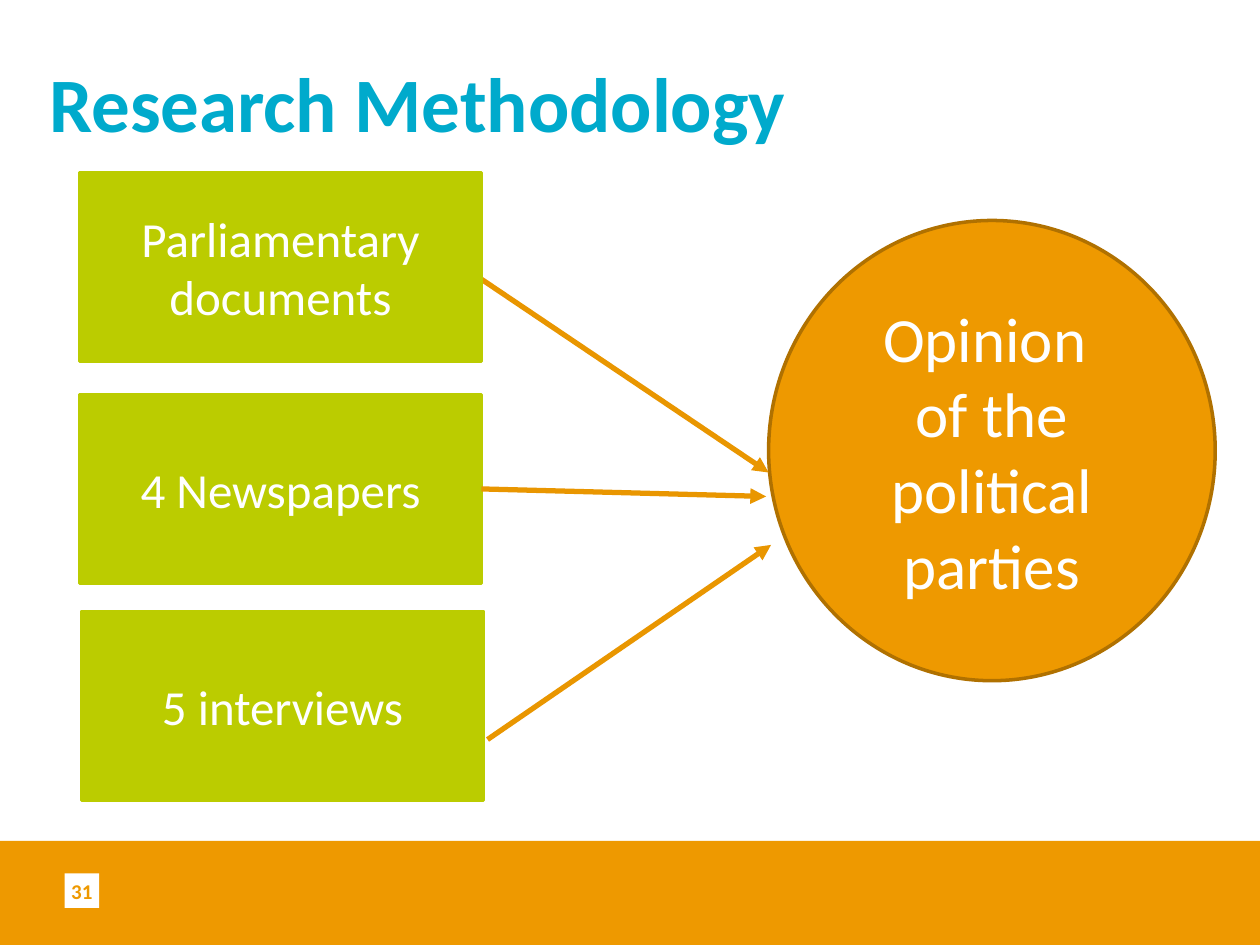
from pptx import Presentation
from pptx.dml.color import RGBColor
from pptx.enum.shapes import MSO_CONNECTOR, MSO_SHAPE
from pptx.enum.text import MSO_ANCHOR, PP_ALIGN
from pptx.oxml.ns import qn
from pptx.util import Pt
from lxml import etree

RECT, OVAL = MSO_SHAPE.RECTANGLE, MSO_SHAPE.OVAL
STRAIGHT = MSO_CONNECTOR.STRAIGHT
LEFT, CENTER = PP_ALIGN.LEFT, PP_ALIGN.CENTER
MIDDLE, BOTTOM = MSO_ANCHOR.MIDDLE, MSO_ANCHOR.BOTTOM
RIGHT_SIDE = 3

FONT = "Calibri"
COLORS = {
    "title": "00AACC",
    "orange": "EE9900",
    "outline": "B07100",
    "arrow": "E99600",
    "green": "BBCC00",
    "white": "FFFFFF",
}


def rgb(name):
    return RGBColor.from_string(COLORS[name])


def write_text(sp, text, size, color="white", bold=False, align=CENTER,
               anchor=MIDDLE, margins=None, spacing=None):
    """Fill a shape with text, one paragraph per line."""
    tf = sp.text_frame
    tf.word_wrap = True
    tf.vertical_anchor = anchor
    if margins is not None:
        tf.margin_left = tf.margin_right = Pt(margins)
        tf.margin_top = tf.margin_bottom = Pt(margins)
    tf.text = text
    for p in tf.paragraphs:
        p.alignment = align
        if spacing:
            p.line_spacing = spacing
        for r in p.runs:
            r.font.name = FONT
            r.font.size = Pt(size)
            r.font.bold = bold
            r.font.color.rgb = rgb(color)


def add_block(s, kind, left, top, width, height, fill, line=None):
    sp = s.shapes.add_shape(kind, Pt(left), Pt(top), Pt(width), Pt(height))
    sp.shadow.inherit = False
    sp.fill.solid()
    sp.fill.fore_color.rgb = rgb(fill)
    if line:
        sp.line.color.rgb = rgb(line)
        sp.line.width = Pt(2)
    else:
        sp.line.fill.background()
    return sp


def add_arrow(s, start, end, source=None):
    """Draw an arrow, joined to the right side of source if one is given."""
    cx = s.shapes.add_connector(STRAIGHT, *(Pt(v) for v in start + end))
    if source is not None:
        cx.begin_connect(source, RIGHT_SIDE)
    cx.line.color.rgb = rgb("arrow")
    cx.line.width = Pt(3)
    etree.SubElement(cx.line._get_or_add_ln(), qn("a:tailEnd"), type="triangle")
    etree.SubElement(cx._element.spPr, qn("a:effectLst"))


def add_source(s, text, left, top):
    sp = add_block(s, RECT, left, top, 229.7, 108, "green", "green")
    write_text(sp, text, 28)
    return sp


def main():
    prs = Presentation()
    prs.slide_width, prs.slide_height = Pt(720), Pt(540)
    s = prs.slides.add_slide(prs.slide_layouts[6])

    # Footer band, title and page number
    add_block(s, RECT, 0, 480.5, 720, 59.5, "orange")
    title = s.shapes.add_textbox(Pt(28.1), Pt(24.5), Pt(646.6), Pt(60.5))
    write_text(title, "Research Methodology", 44, "title", bold=True,
               align=LEFT, anchor=BOTTOM, margins=0, spacing=0.9)
    page = add_block(s, RECT, 36.9, 499, 19.7, 19.8, "white")
    write_text(page, "31", 12, "orange", bold=True, margins=2.88)

    # Result of the research
    opinion = add_block(s, OVAL, 439.2, 126, 255.2, 263, "orange", "outline")
    write_text(opinion, "Opinion \nof the political parties", 36)

    # Sources; the first arrow starts behind its box
    add_arrow(s, (260.6, 149.8), (439.2, 270))
    add_source(s, "Parliamentary documents", 45.4, 98.6)
    newspapers = add_source(s, "4 Newspapers", 45.4, 225.4)
    add_source(s, "5 interviews", 46.6, 349.6)
    add_arrow(s, (278.6, 422.6), (440.6, 311.4))
    add_arrow(s, (275.1, 279.4), (437.8, 283.7), newspapers)

    prs.save("out.pptx")


if __name__ == "__main__":
    main()
